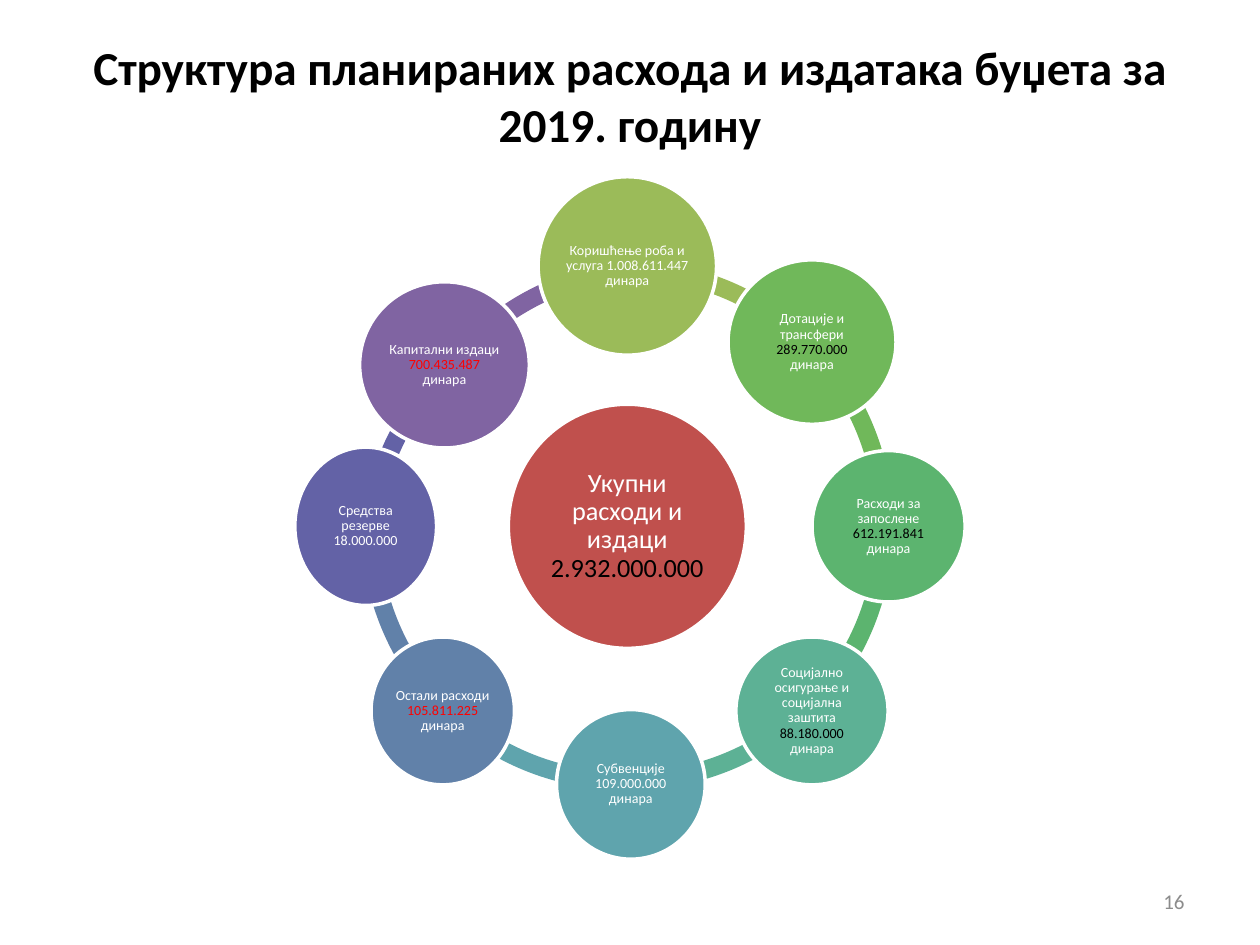
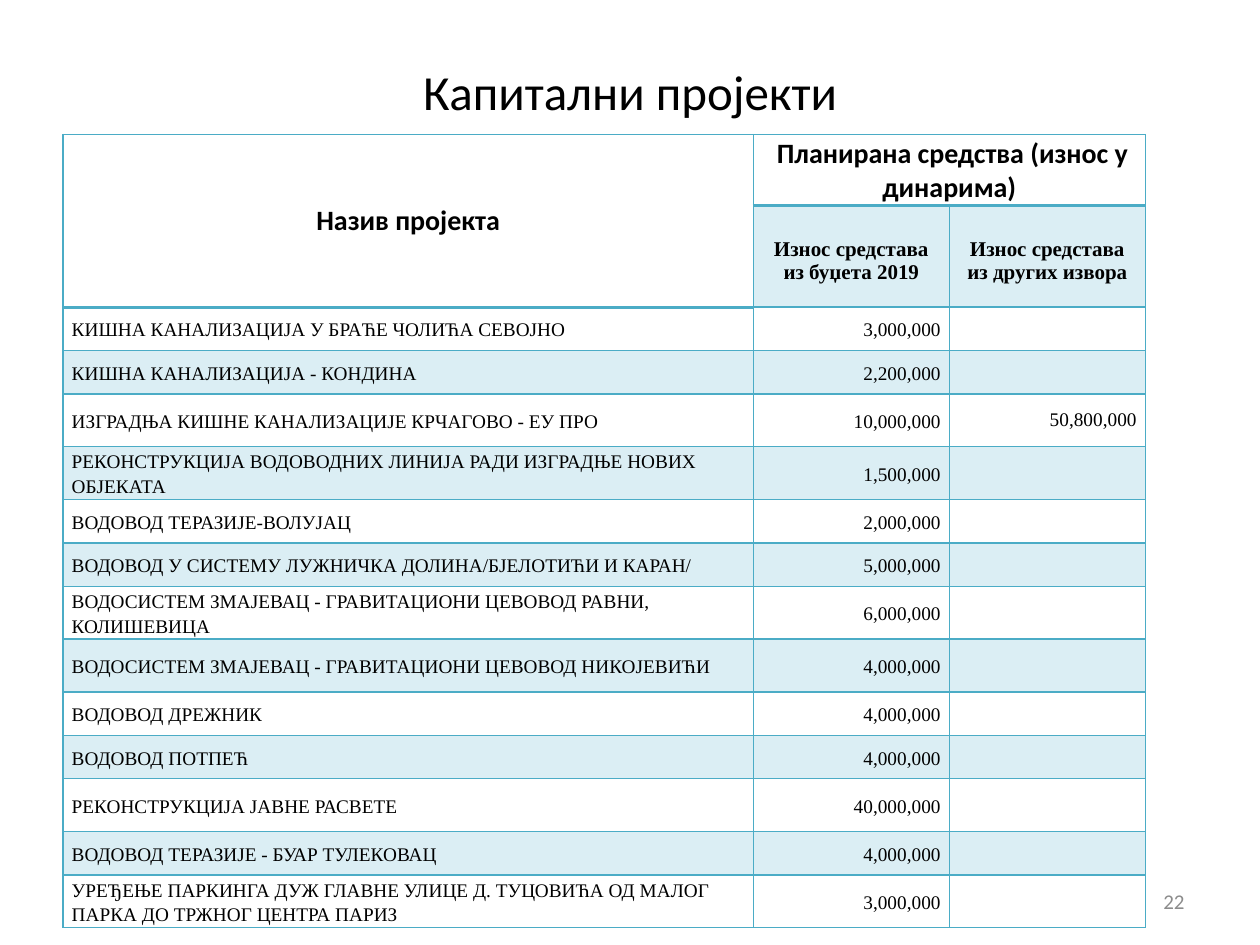
from lxml import etree
from pptx import Presentation
from pptx.dml.color import RGBColor
from pptx.enum import shapes, text
from pptx.oxml import ns
from pptx.util import Pt

BLACK, WHITE, RED, GREY = "000000", "FFFFFF", "FF0000", "8C8C8C"
TEAL, PALE_TEAL, BRICK = "4BACC6", "DBEEF4", "C0504D"
SANS, SERIF = "Calibri", "Times New Roman"
LEFT, CENTER, RIGHT = text.PP_ALIGN.LEFT, text.PP_ALIGN.CENTER, text.PP_ALIGN.RIGHT
MIDDLE, BOTTOM = text.MSO_ANCHOR.MIDDLE, text.MSO_ANCHOR.BOTTOM


def color(value):
    return RGBColor.from_string(value)


def apply(target, values):
    for name, value in values.items():
        setattr(target, name, value)


class Deck:
    """Holds the style and the current slide."""

    ring_size = 304
    ring_thickness = 0.034

    def __init__(self):
        self.presentation = Presentation()
        apply(self.presentation, {"slide_width": Pt(720), "slide_height": Pt(540)})
        self.slide = None

    def add_slide(self, title, number, top, height, size, bold):
        layout = self.presentation.slide_layouts[5]
        self.slide = self.presentation.slides.add_slide(layout)
        shape = self.slide.shapes.title
        apply(shape, {"left": Pt(36), "top": Pt(top), "width": Pt(648), "height": Pt(height)})
        self.frame_text(shape.text_frame, [(title, BLACK)], size, bold=bold)
        self.label(str(number), 516, 500.5, 168, 29)

    def fill_paragraphs(self, frame, paragraphs, size, font, bold, align, spacing):
        """Fill a frame; each paragraph is a list of (text, color) runs."""
        for index, runs in enumerate(paragraphs):
            paragraph = frame.paragraphs[0] if index == 0 else frame.add_paragraph()
            apply(paragraph, {"alignment": align, "line_spacing": spacing})
            for words, ink in runs:
                run = paragraph.add_run()
                run.text = words
                apply(run.font, {"size": Pt(size), "name": font, "bold": bold})
                run.font.color.rgb = color(ink)

    def frame_text(self, frame, runs, size, bold=False, align=CENTER,
                   spacing=1.0, inset=None):
        apply(frame, {"word_wrap": True, "auto_size": text.MSO_AUTO_SIZE.NONE,
                      "vertical_anchor": MIDDLE})
        if inset is not None:
            for side in ("left", "right", "top", "bottom"):
                setattr(frame, "margin_" + side, Pt(inset))
        self.fill_paragraphs(frame, [runs], size, SANS, bold, align, spacing)

    def label(self, words, left, top, width, height):
        box = self.slide.shapes.add_textbox(Pt(left), Pt(top), Pt(width), Pt(height))
        self.frame_text(box.text_frame, [(words, GREY)], 12, align=RIGHT)

    def shape(self, kind, left, top, width, height, fill):
        shape = self.slide.shapes.add_shape(kind, Pt(left), Pt(top), Pt(width), Pt(height))
        shape.shadow.inherit = False
        shape.fill.solid()
        shape.fill.fore_color.rgb = color(fill)
        shape.line.fill.background()
        return shape

    def arc(self, left, top, start, end, fill):
        """Ring segment, clockwise from start to end in degrees."""
        shape = self.shape(shapes.MSO_SHAPE.BLOCK_ARC, left, top,
                           self.ring_size, self.ring_size, fill)
        # Angles are stored in 1/60000 degree, adjustments in 1/100000
        for index, value in enumerate((start * 0.6, end * 0.6, self.ring_thickness)):
            shape.adjustments[index] = value

    def circle(self, box, fill, runs, size, inset):
        shape = self.shape(shapes.MSO_SHAPE.OVAL, *box, fill)
        shape.line.color.rgb = color(WHITE)
        shape.line.width = Pt(2)
        self.frame_text(shape.text_frame, runs, size, spacing=0.9, inset=inset)

    def table(self, left, top, widths, heights):
        frame = self.slide.shapes.add_table(len(heights), len(widths), Pt(left), Pt(top),
                                            Pt(sum(widths)), Pt(sum(heights)))
        table = frame.table
        apply(table, {"first_row": False, "horz_banding": False})
        for column, width in zip(table.columns, widths):
            column.width = Pt(width)
        for row, height in zip(table.rows, heights):
            row.height = Pt(height)
        return table

    def cell(self, cell, lines, size, font, bold, align,
             spacing=1.0, anchor=MIDDLE, bottom=0):
        apply(cell, {"vertical_anchor": anchor, "margin_left": Pt(5), "margin_right": Pt(5),
                     "margin_top": 0, "margin_bottom": Pt(bottom)})
        self.fill_paragraphs(cell.text_frame, [[(line, BLACK)] for line in lines],
                             size, font, bold, align, spacing)

    def cell_style(self, cell, fill, top_width, bottom_width):
        if fill:
            cell.fill.solid()
            cell.fill.fore_color.rgb = color(fill)
        else:
            cell.fill.background()
        properties = cell._tc.get_or_add_tcPr()
        edges = (("a:lnL", 1), ("a:lnR", 1), ("a:lnT", top_width), ("a:lnB", bottom_width))
        for index, (tag, width) in enumerate(edges):
            line = etree.Element(ns.qn(tag), w=str(Pt(width)))
            solid = etree.SubElement(line, ns.qn("a:solidFill"))
            etree.SubElement(solid, ns.qn("a:srgbClr"), val=TEAL)
            properties.insert(index, line)


# Expense groups, clockwise from the top:
# fill, circle box, ring segment (left, top, start, end), text runs
EXPENSES = [
    ("9BBB59", (307.5, 101, 102, 102), (206.5, 149, 270, 315),
     [("Коришћење роба и услуга 1.008.611.447 динара", WHITE)]),
    ("70B85A", (416, 148.5, 96, 94), (206.5, 149, 315, 0),
     [("Дотације и трансфери ", WHITE), ("289.770.000 ", BLACK), ("динара", WHITE)]),
    ("5CB46F", (464, 257.5, 87.5, 86.5), (206.5, 149, 0, 45),
     [("Расходи за запослене ", WHITE), ("612.191.841 ", BLACK), ("динара", WHITE)]),
    ("5DB195", (420.5, 364, 87, 84.5), (208, 147.5, 45.93, 89.8),
     [("Социјално осигурање и социјална заштита ", WHITE), ("88.180.000 ", BLACK),
      ("динара", WHITE)]),
    ("5FA4AD", (318, 405.5, 85, 85.5), (205, 147.5, 88.5, 134.1),
     [("Субвенције 109.000.000 динара", WHITE)]),
    ("6181A9", (212, 364, 82, 84.5), (206.5, 149, 135, 180),
     [("Остали расходи ", WHITE), ("105.811.225 ", RED), ("динара", WHITE)]),
    ("6362A6", (168.5, 255.5, 81, 90.5), (206, 164, 185.81, 225.94),
     [("Средства резерве 18.000.000", WHITE)]),
    ("8064A2", (205.5, 161, 97, 95), (220.5, 148.5, 217.83, 264.88),
     [("Капитални издаци ", WHITE), ("700.435.487 ", RED), ("динара", WHITE)]),
]

SHORT, TALL = 24.8, 30.2
# Project name, budget amount, amount from other sources, row height
PROJECTS = [
    ("КИШНА КАНАЛИЗАЦИЈА У БРАЋЕ ЧОЛИЋА СЕВОЈНО", "3,000,000", "", SHORT),
    ("КИШНА КАНАЛИЗАЦИЈА - КОНДИНА", "2,200,000", "", SHORT),
    ("ИЗГРАДЊА КИШНЕ КАНАЛИЗАЦИЈЕ КРЧАГОВО - ЕУ ПРО", "10,000,000", "50,800,000", TALL),
    ("РЕКОНСТРУКЦИЈА ВОДОВОДНИХ ЛИНИЈА РАДИ ИЗГРАДЊЕ НОВИХ ОБЈЕКАТА",
     "1,500,000", "", TALL),
    ("ВОДОВОД ТЕРАЗИЈЕ-ВОЛУЈАЦ", "2,000,000", "", SHORT),
    ("ВОДОВОД У СИСТЕМУ ЛУЖНИЧКА ДОЛИНА/БЈЕЛОТИЋИ И КАРАН/", "5,000,000", "", SHORT),
    ("ВОДОСИСТЕМ ЗМАЈЕВАЦ - ГРАВИТАЦИОНИ ЦЕВОВОД РАВНИ, КОЛИШЕВИЦА",
     "6,000,000", "", TALL),
    ("ВОДОСИСТЕМ ЗМАЈЕВАЦ - ГРАВИТАЦИОНИ ЦЕВОВОД НИКОЈЕВИЋИ", "4,000,000", "", TALL),
    ("ВОДОВОД ДРЕЖНИК", "4,000,000", "", SHORT),
    ("ВОДОВОД ПОТПЕЋ", "4,000,000", "", SHORT),
    ("РЕКОНСТРУКЦИЈА ЈАВНЕ РАСВЕТЕ", "40,000,000", "", TALL),
    ("ВОДОВОД ТЕРАЗИЈЕ - БУАР ТУЛЕКОВАЦ", "4,000,000", "", SHORT),
    ("УРЕЂЕЊЕ ПАРКИНГА ДУЖ ГЛАВНЕ УЛИЦЕ Д. ТУЦОВИЋА ОД МАЛОГ ПАРКА ДО ТРЖНОГ ЦЕНТРА ПАРИЗ",
     "3,000,000", "", TALL),
]


def expense_slide(deck):
    deck.add_slide("Структура планираних расхода и издатака буџета за 2019. годину",
                   16, top=21, height=67, size=27, bold=True)
    # Ring behind the circles
    for fill, _, segment, _ in reversed(EXPENSES):
        deck.arc(*segment, fill)
    # Total in the centre, groups around it
    deck.circle((290.5, 231, 136, 139.5), BRICK,
                [("Укупни расходи и издаци ", WHITE), ("2.932.000.000", BLACK)], 15, 1.5)
    for fill, box, _, runs in EXPENSES:
        deck.circle(box, fill, runs, 8, 0.8)


def project_slide(deck):
    deck.add_slide("Капитални пројекти", 22, top=21.5, height=61, size=28, bold=False)
    heights = [40.3, 58.3] + [project[3] for project in PROJECTS]
    table = deck.table(36, 77, [394.5, 112, 112], heights)

    # Fills and borders: every second row is tinted, header edges are heavy
    heavy = {(0, 0), (0, 1), (0, 2), (1, 0)}
    for row in range(len(heights)):
        for column in range(3):
            tinted = row % 2 == 1 and (row, column) != (1, 0)
            top, bottom = (2 if edge in heavy else 1
                           for edge in ((row - 1, column), (row, column)))
            deck.cell_style(table.cell(row, column), PALE_TEAL if tinted else None, top, bottom)

    # Two-level header
    table.cell(0, 0).merge(table.cell(1, 0))
    table.cell(0, 1).merge(table.cell(0, 2))
    deck.cell(table.cell(0, 0), ["Назив пројекта"], 16, SANS, True, CENTER)
    deck.cell(table.cell(0, 1), [" Планирана средства (износ у динарима)"],
              16, SANS, True, CENTER, anchor=BOTTOM)
    sources = (["Износ средстава", "из буџета 2019"], ["Износ средстава из других извора"])
    for column, lines in enumerate(sources, 1):
        deck.cell(table.cell(1, column), lines, 12, SERIF, True, CENTER,
                  anchor=BOTTOM, bottom=13)

    # Project rows
    for row, (name, budget, other, _) in enumerate(PROJECTS, 2):
        columns = ((name, LEFT, 1.15), (budget, RIGHT, 1.15), (other, RIGHT, 1.0))
        for column, (words, align, spacing) in enumerate(columns):
            deck.cell(table.cell(row, column), [words] if words else [],
                      11, SERIF, False, align, spacing)


def main():
    deck = Deck()
    expense_slide(deck)
    project_slide(deck)
    deck.presentation.save("out.pptx")


if __name__ == "__main__":
    main()
